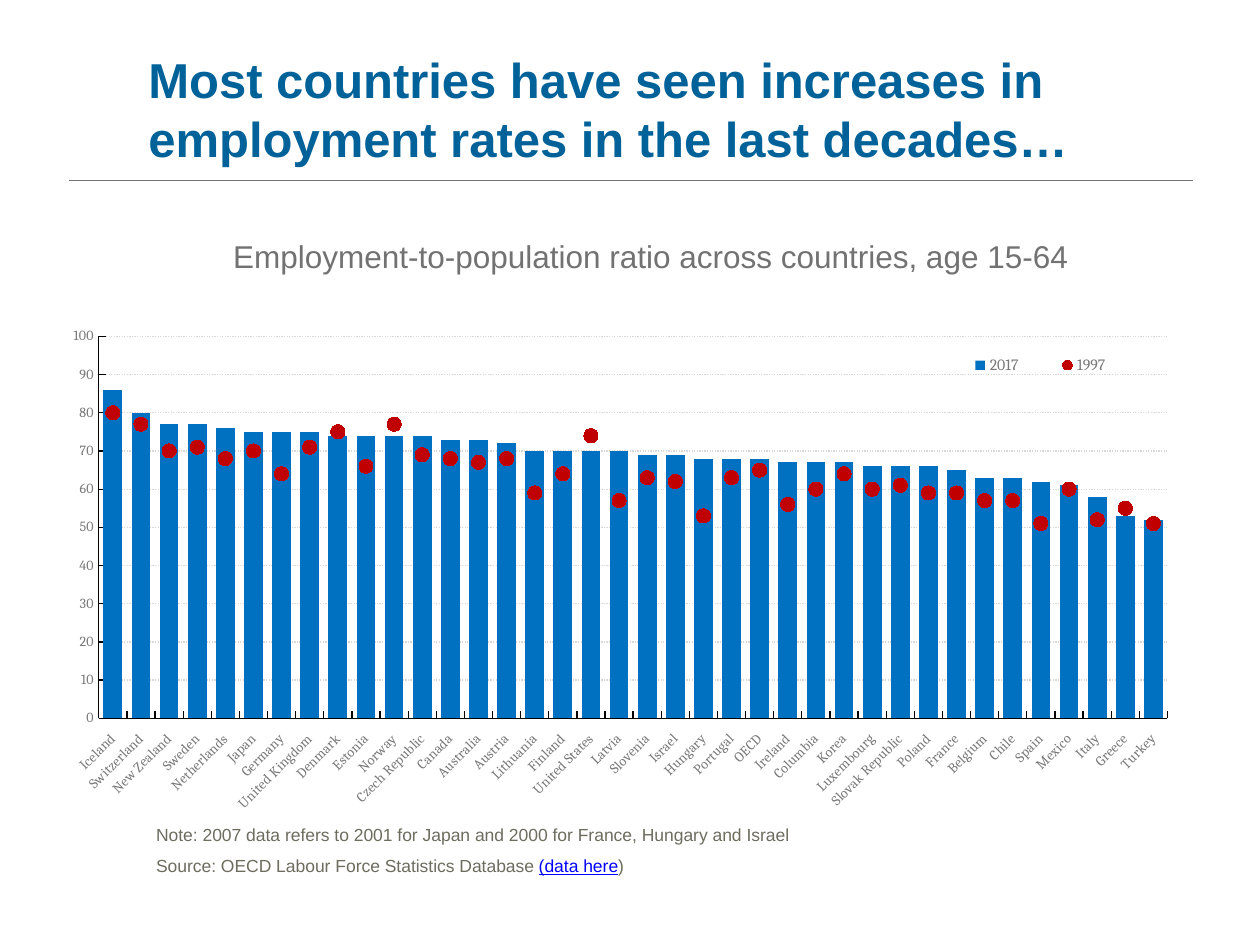
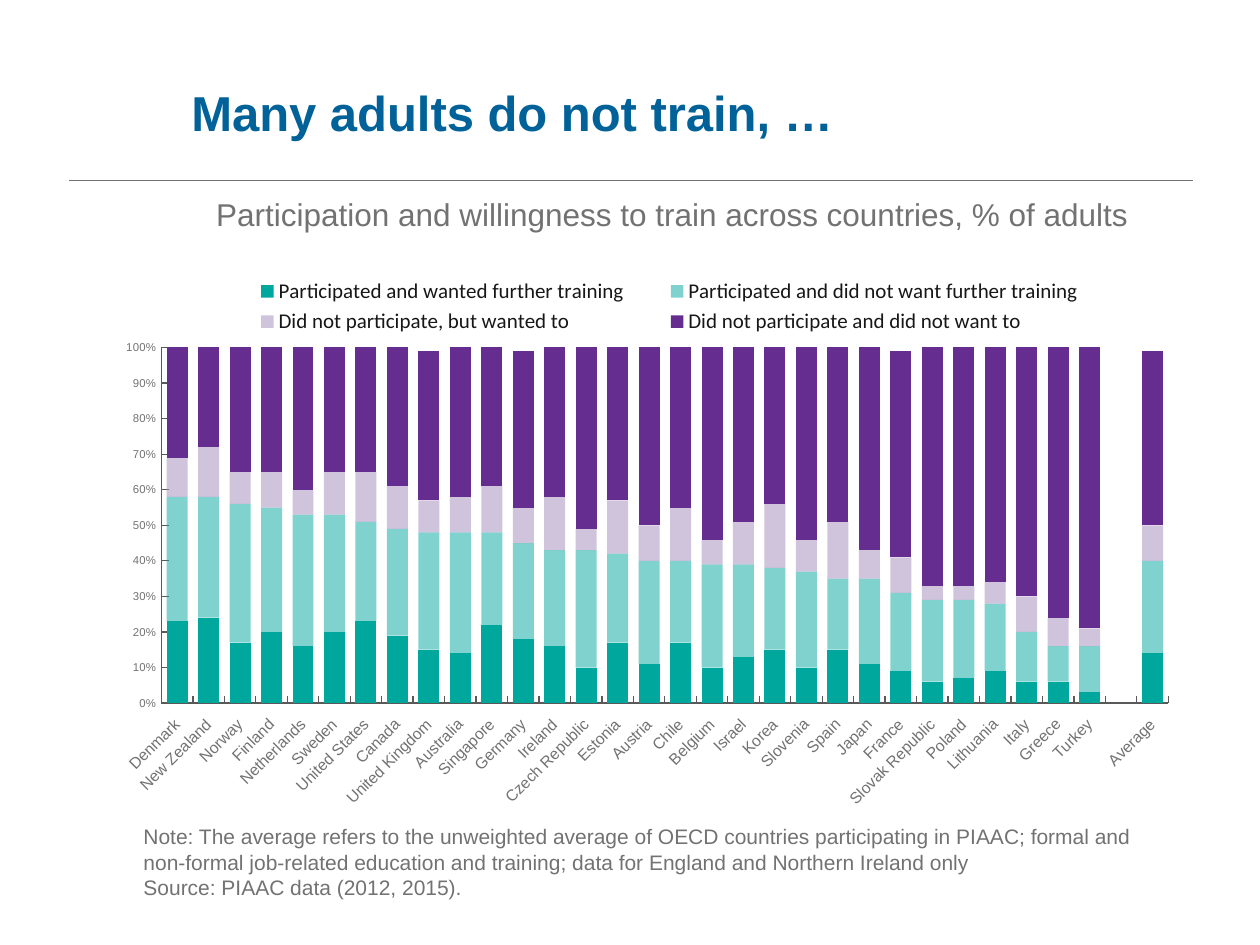
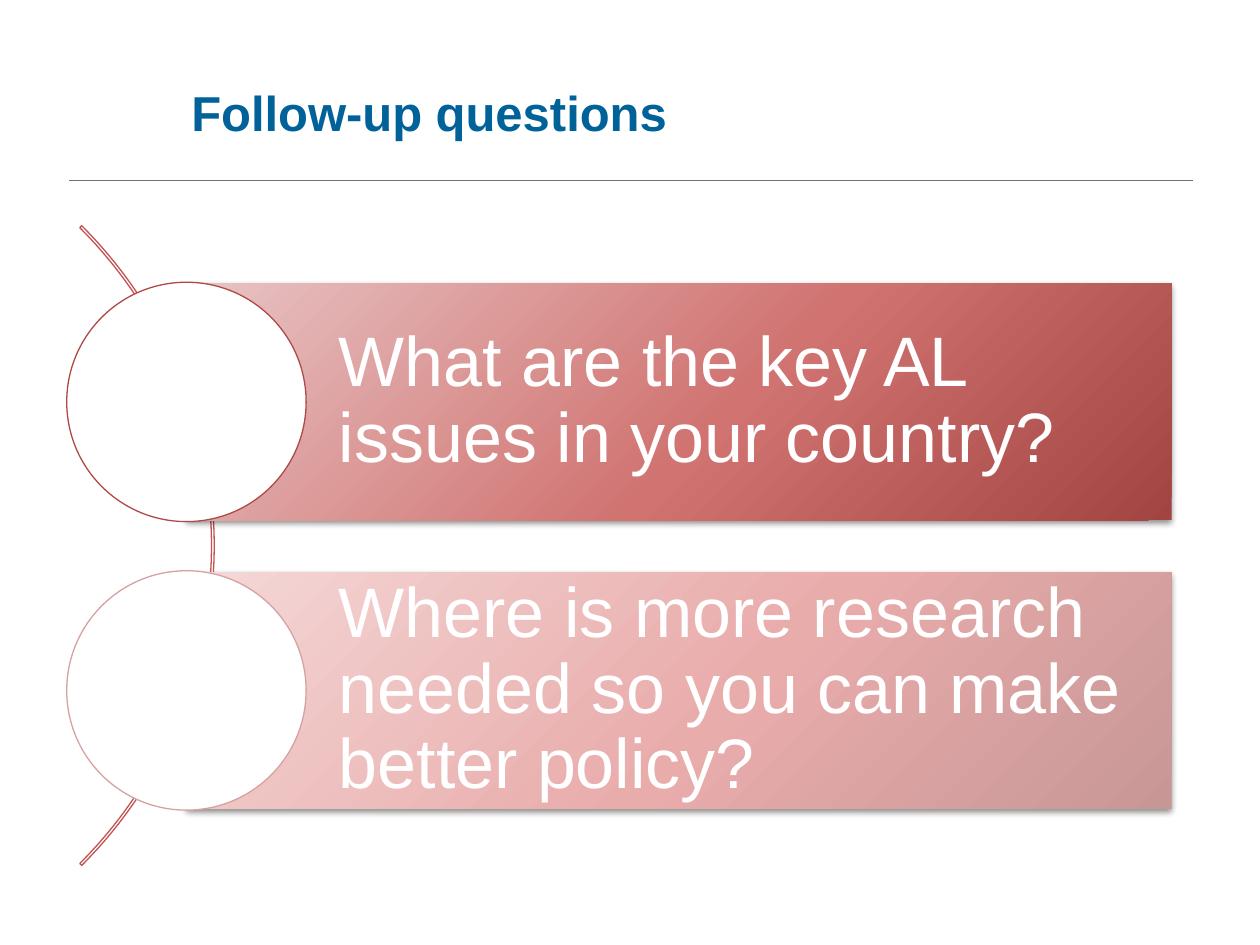
from dataclasses import dataclass

from lxml.etree import SubElement
from pptx import Presentation
from pptx.chart.data import CategoryChartData
from pptx.dml.color import RGBColor
from pptx.enum.chart import XL_CHART_TYPE, XL_LEGEND_POSITION, XL_MARKER_STYLE, XL_TICK_LABEL_POSITION, XL_TICK_MARK
from pptx.enum.dml import MSO_LINE
from pptx.enum.shapes import MSO_CONNECTOR, MSO_SHAPE
from pptx.enum.text import MSO_ANCHOR, PP_ALIGN
from pptx.oxml import parse_xml
from pptx.oxml.ns import nsdecls, qn
from pptx.util import Emu, Inches, Pt

COLS, ROWS = 100, 75
CELL = Inches(10) // COLS


@dataclass(frozen=True)
class Theme:
    font: str = "Arial"
    serif: str = "Cambria"
    sans: str = "Calibri"
    title: str = "006299"
    grey: str = "727272"
    note: str = "6D6C5F"
    link: str = "0000FF"
    chart_grey: str = "797979"
    black: str = "000000"
    axis: str = "595959"
    grid: str = "D9D9D9"
    legend: str = "171717"
    white: str = "FFFFFF"
    bar: str = "0070C0"
    dot: str = "C00000"
    teal: str = "00A79D"
    lilac: str = "A18ABA"
    purple: str = "662D91"
    arc: str = "C15452"
    title_size: float = 28
    subtitle_size: float = 18
    question_size: float = 40


T = Theme()

RATE_COUNTRIES = (
    "Iceland,Switzerland,New Zealand,Sweden,Netherlands,Japan,Germany,United Kingdom,Denmark,Estonia,"
    "Norway,Czech Republic,Canada,Australia,Austria,Lithuania,Finland,United States,Latvia,Slovenia,"
    "Israel,Hungary,Portugal,OECD,Ireland,Columbia,Korea,Luxembourg,Slovak Republic,Poland,"
    "France,Belgium,Chile,Spain,Mexico,Italy,Greece,Turkey"
).split(",")
RATES = {
    "2017": [86, 80, 77, 77, 76, 75, 75, 75, 74, 74, 74, 74, 73, 73, 72, 70, 70, 70, 70, 69,
             69, 68, 68, 68, 67, 67, 67, 66, 66, 66, 65, 63, 63, 62, 61, 58, 53, 52],
    "1997": [80, 77, 70, 71, 68, 70, 64, 71, 75, 66, 77, 69, 68, 67, 68, 59, 64, 74, 57, 63,
             62, 53, 63, 65, 56, 60, 64, 60, 61, 59, 59, 57, 57, 51, 60, 52, 55, 51],
}
TRAINING_COUNTRIES = (
    "Denmark,New Zealand,Norway,Finland,Netherlands,Sweden,United States,Canada,United Kingdom,Australia,"
    "Singapore,Germany,Ireland,Czech Republic,Estonia,Austria,Chile,Belgium,Israel,Korea,"
    "Slovenia,Spain,Japan,France,Slovak Republic,Poland,Lithuania,Italy,Greece,Turkey,,Average"
).split(",")
TRAINING_PERCENT = {
    "Participated and wanted further training":
        [23, 24, 17, 20, 16, 20, 23, 19, 15, 14, 22, 18, 16, 10, 17, 11, 17, 10, 13, 15,
         10, 15, 11, 9, 6, 7, 9, 6, 6, 3, None, 14],
    "Participated and did not want further training":
        [35, 34, 39, 35, 37, 33, 28, 30, 33, 34, 26, 27, 27, 33, 25, 29, 23, 29, 26, 23,
         27, 20, 24, 22, 23, 22, 19, 14, 10, 13, None, 26],
    "Did not participate, but wanted to":
        [11, 14, 9, 10, 7, 12, 14, 12, 9, 10, 13, 10, 15, 6, 15, 10, 15, 7, 12, 18,
         9, 16, 8, 10, 4, 4, 6, 10, 8, 5, None, 10],
    "Did not participate and did not want to":
        [31, 28, 35, 35, 40, 35, 35, 39, 42, 42, 40, 44, 42, 51, 43, 51, 45, 54, 49, 44,
         55, 49, 57, 58, 67, 67, 66, 70, 76, 79, None, 49],
}
QUESTIONS = [
    ("What are the key AL issues in your country?", ("E8C4C4", "D07371", "A24441"), "AE4946"),
    ("Where is more research needed so you can make better policy?", ("F4D8D7", "E8ACAB", "C79796"), "D6A2A1"),
]


def cells(*lengths):
    return [Emu(round(n * CELL)) for n in lengths]


def rgb(color):
    return RGBColor.from_string(color)


def put(obj, **fmt):
    for key, value in fmt.items():
        setattr(obj, key, value)


def style(font, size, color, name=T.font, **fmt):
    put(font, size=Pt(size), name=name, **fmt)
    font.color.rgb = rgb(color)


def stroke(line, color, width, **fmt):
    line.color.rgb = rgb(color)
    put(line, width=Pt(width), **fmt)


def fill(target, color, alpha=None):
    target.fill.solid()
    target.fill.fore_color.rgb = rgb(color)
    if alpha:
        clr = target.fill._xPr.find(f".//{qn('a:srgbClr')}")
        SubElement(clr, qn("a:alpha")).set("val", str(alpha * 1000))


def write(tf, paragraphs, size, color, para=None, indent=0, gap=0, **fmt):
    tf.word_wrap = True
    for i, runs in enumerate(paragraphs):
        p = tf.paragraphs[0] if i == 0 else tf.add_paragraph()
        put(p, **(para or {}))
        if i and gap:
            p.space_before = Pt(gap)
        if indent:
            pPr = p._p.get_or_add_pPr()
            pPr.set("marL", str(cells(indent)[0]))
            pPr.set("indent", "0")
        for text, own in runs:
            r = p.add_run()
            r.text = text
            style(r.font, **{"size": size, "color": color, **fmt, **own})


def add_text(s, at, paragraphs, size, color, anchor=MSO_ANCHOR.TOP, **fmt):
    tf = s.shapes.add_textbox(*cells(*at)).text_frame
    tf.vertical_anchor = anchor
    write(tf, paragraphs, size, color, **fmt)


def add_titled_slide(prs, title, at):
    s = prs.slides.add_slide(prs.slide_layouts[6])
    rule = s.shapes.add_connector(MSO_CONNECTOR.STRAIGHT, *cells(5.5, 14.3, 94.7, 14.3))
    stroke(rule.line, T.grey, 0.5)
    SubElement(rule._element.spPr, qn("a:effectLst"))
    add_text(s, at, [[(title, {})]], T.title_size, T.title, anchor=MSO_ANCHOR.MIDDLE, bold=True)
    return s


def add_subtitle(s, at, text):
    add_text(s, at, [[(text, {})]], T.subtitle_size, T.grey, para={"alignment": PP_ALIGN.CENTER})


def add_shape(s, kind, at, line=None):
    sp = s.shapes.add_shape(kind, *cells(*at))
    sp.shadow.inherit = False
    sp.fill.background()
    if line:
        stroke(sp.line, line, 0.75)
    else:
        sp.line.fill.background()
    return sp


def place(parent, index, frame, target=None):
    for old in parent.findall(qn("c:layout")):
        parent.remove(old)
    layout = parent.makeelement(qn("c:layout"))
    manual = SubElement(layout, qn("c:manualLayout"))
    modes = {"layoutTarget": target} if target else {}
    modes.update(xMode="edge", yMode="edge", **dict(zip("xywh", frame)))
    for tag, value in modes.items():
        SubElement(manual, qn(f"c:{tag}")).set("val", str(value))
    parent.insert(index, layout)


def style_axis(axis, line, **font):
    put(axis, major_tick_mark=XL_TICK_MARK.INSIDE, minor_tick_mark=XL_TICK_MARK.NONE, has_major_gridlines=False)
    stroke(axis.format.line, line, 0.75)
    style(axis.tick_labels.font, **font)


def add_bars(s, at, kind, names, series, number_format, top, colors, plot, legend, axis, cat_size, val_size,
             label_font, label_color):
    data = CategoryChartData(number_format=number_format)
    data.categories = names
    for name, values in series.items():
        data.add_series(name, values)
    chart = s.shapes.add_chart(kind, *cells(*at), data).chart
    put(chart, has_title=False, has_legend=True)
    style(chart.font, 10, label_color, T.serif)
    put(chart.plots[0], gap_width=50, vary_by_categories=False)
    for ser, color in zip(chart.plots[0].series, colors):
        ser.invert_if_negative = False
        fill(ser.format, *color)
    cat, val = chart.category_axis, chart.value_axis
    style_axis(cat, axis, size=cat_size, color=label_color, name=label_font)
    style_axis(val, axis, size=val_size, color=label_color, name=label_font)
    cat.tick_label_position = XL_TICK_LABEL_POSITION.LOW
    cat._element.xpath("c:txPr/a:bodyPr")[0].set("rot", "-2700000")
    put(val, minimum_scale=0, maximum_scale=top, major_unit=top / 10)
    put(val.tick_labels, number_format=number_format, number_format_is_linked=False)
    put(chart.legend, position=legend["position"], include_in_layout=True)
    style(chart.legend.font, **legend["font"])
    place(chart.legend._element, 1, legend["frame"])
    place(chart._chartSpace.chart.plotArea, 0, *plot)
    return chart


def move_last_series_to_dots(chart, color):
    bars = chart._chartSpace.chart.plotArea.find(qn("c:barChart"))
    ser = bars.findall(qn("c:ser"))[-1]
    for flag in ser.findall(qn("c:invertIfNegative")):
        ser.remove(flag)
    lines = parse_xml(
        f'<c:lineChart {nsdecls("c")}><c:grouping val="standard"/><c:varyColors val="0"/>'
        '<c:marker val="1"/></c:lineChart>')
    lines.insert(2, ser)
    for ax in bars.findall(qn("c:axId")):
        SubElement(lines, qn("c:axId")).set("val", ax.get("val"))
    bars.addnext(lines)
    dots = chart.plots[1].series[0]
    dots.smooth = False
    dots.format.line.fill.background()
    put(dots.marker, style=XL_MARKER_STYLE.CIRCLE, size=8)
    fill(dots.marker.format, color)
    stroke(dots.marker.format.line, color, 0.75)


def add_employment(prs):
    s = add_titled_slide(prs, "Most countries have seen increases in employment rates in the last decades…",
                         (10.8, 3, 85.8, 11.2))
    add_subtitle(s, (10.8, 18.3, 81.7, 4), "Employment-to-population ratio across countries, age 15-64")
    add_text(s, (6.7, 64.9, 83.9, 7.4), [
        [("Note: 2007 data refers to 2001 for Japan and 2000 for France, Hungary and Israel", {})],
        [("Source: OECD Labour Force Statistics Database ", {}),
         ("(data here", {"color": T.link, "underline": True}), (")", {})],
    ], 10, T.note, para={"alignment": PP_ALIGN.JUSTIFY}, indent=4.7, gap=6)
    chart = add_bars(
        s, (2.8, 24.3, 91.7, 40.8), XL_CHART_TYPE.COLUMN_CLUSTERED, RATE_COUNTRIES, RATES, "General", 100,
        [(T.bar,)], ((0.055, 0.059, 0.925, 0.743), "inner"),
        {"position": XL_LEGEND_POSITION.RIGHT, "frame": (0.78, 0.07, 0.18, 0.09),
         "font": {"size": 9, "color": T.chart_grey, "name": T.serif}},
        T.black, 8, 8, T.serif, T.chart_grey)
    chart.value_axis.has_major_gridlines = True
    stroke(chart.value_axis.major_gridlines.format.line, T.grid, 0.75, dash_style=MSO_LINE.ROUND_DOT)
    move_last_series_to_dots(chart, T.dot)


def add_training(prs):
    s = add_titled_slide(prs, "Many adults do not train, …", (14.2, 3.3, 86.1, 11.2))
    add_subtitle(s, (9.2, 15, 88.3, 4), "Participation and willingness to train across countries, % of adults")
    add_text(s, (10.4, 64.9, 82.5, 7.1), [
        [("Note: The average refers to the unweighted average of OECD countries participating in PIAAC; formal "
          "and non-formal job-related education and training; data for England and Northern Ireland only", {})],
        [("Source: PIAAC data (2012, 2015).", {})],
    ], 12, T.grey)
    shares = {name: [None if v is None else v / 100 for v in values] for name, values in TRAINING_PERCENT.items()}
    chart = add_bars(
        s, (9.2, 21.3, 83.7, 43.3), XL_CHART_TYPE.COLUMN_STACKED, TRAINING_COUNTRIES, shares, "0%", 1,
        [(T.teal,), (T.teal, 50), (T.lilac, 50), (T.purple,)], ((0.009, 0.133, 0.989, 0.857), "outer"),
        {"position": XL_LEGEND_POSITION.TOP, "frame": (0.1, 0.01, 0.85, 0.12),
         "font": {"size": 12, "color": T.legend, "name": T.sans}},
        T.axis, 9, 6.5, T.font, T.grey)
    chart.plots[0].overlap = 100


def add_band(s, at, text, colors):
    sp = add_shape(s, MSO_SHAPE.RECTANGLE, at)
    sp.fill.solid()
    stops = "".join(f'<a:gs pos="{pos}000"><a:srgbClr val="{c}"/></a:gs>' for pos, c in zip((0, 55, 100), colors))
    spPr = sp._element.spPr
    spPr.replace(spPr.find(qn("a:solidFill")), parse_xml(
        f'<a:gradFill {nsdecls("a")} rotWithShape="1"><a:gsLst>{stops}</a:gsLst><a:path path="circle">'
        '<a:fillToRect l="-40000" t="-90000" r="140000" b="190000"/></a:path></a:gradFill>'))
    spPr.find(qn("a:effectLst")).append(parse_xml(
        f'<a:outerShdw {nsdecls("a")} blurRad="{Pt(4)}" dist="{Pt(2)}" dir="5400000" rotWithShape="0">'
        f'<a:srgbClr val="{T.black}"><a:alpha val="45000"/></a:srgbClr></a:outerShdw>'))
    left, pad = cells(12.1, 1.1)
    put(sp.text_frame, vertical_anchor=MSO_ANCHOR.MIDDLE, margin_left=left, margin_top=pad,
        margin_right=pad, margin_bottom=pad)
    write(sp.text_frame, [[(text, {})]], T.question_size, T.white,
          para={"alignment": PP_ALIGN.LEFT, "line_spacing": 0.9})


def add_questions(prs):
    s = add_titled_slide(prs, "Follow-up questions", (14.2, 3.3, 86.1, 11.2))
    arc = add_shape(s, MSO_SHAPE.BLOCK_ARC, (-54.8, 7.4, 71.8, 71.8), T.arc)
    for i, value in enumerate((189, 27, 0.003)):
        arc.adjustments[i] = value
    left, disc, band, first, step = 5.3, 19, 18.8, 31.9, 22.9
    for i, (text, colors, line) in enumerate(QUESTIONS):
        mid = first + i * step
        add_band(s, (left + disc / 2, mid - band / 2, 78.2, band), text, colors)
        fill(add_shape(s, MSO_SHAPE.OVAL, (left, mid - disc / 2, disc, disc), line), T.white)


def main():
    prs = Presentation()
    put(prs, slide_width=COLS * CELL, slide_height=ROWS * CELL)
    for add in (add_employment, add_training, add_questions):
        add(prs)
    prs.save("out.pptx")


if __name__ == "__main__":
    main()
